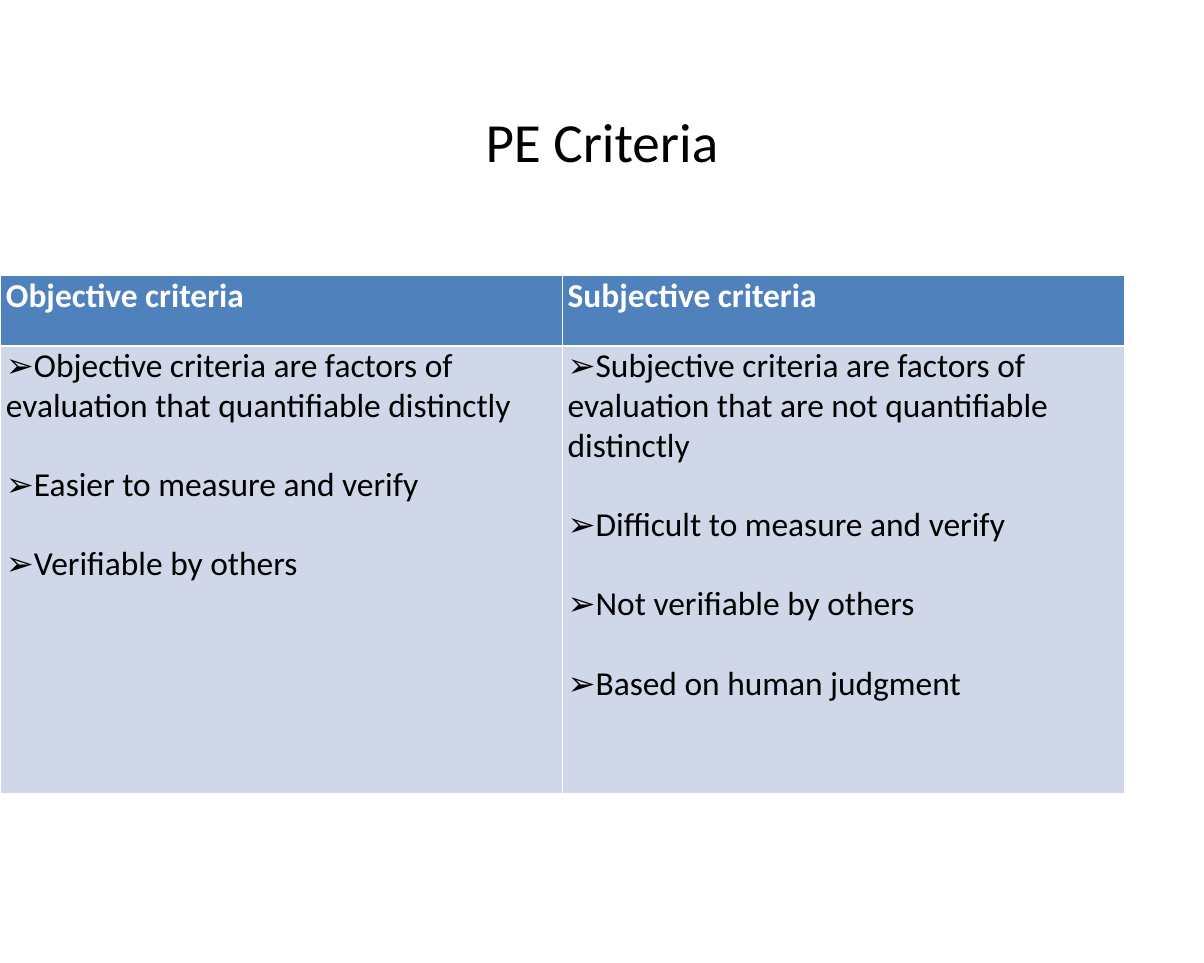
from dataclasses import dataclass

from lxml import etree
from pptx import Presentation
from pptx import util as u
from pptx.dml import color
from pptx.enum import text
from pptx.oxml import ns


@dataclass(frozen=True)
class Theme:
    font: str = "Calibri"
    bullet_font: str = "Arial"
    title_size: float = 66
    body_size: float = 40
    ink: str = "000000"
    white: str = "FFFFFF"
    header_fill: str = "4F81BC"
    body_fill: str = "D0D7E8"


THEME = Theme()
BULLET = "➢"
HEADINGS = ["Objective criteria", "Subjective criteria"]
POINTS = [
    [
        "Objective criteria are factors of evaluation that quantifiable distinctly",
        "Easier to measure and verify",
        "Verifiable by others",
    ],
    [
        "Subjective criteria are factors of evaluation that are not quantifiable distinctly",
        "Difficult to measure and verify",
        "Not verifiable by others",
        "Based on human judgment",
    ],
]
NO_MARGINS = {f"margin_{side}": 0 for side in ("left", "top", "right", "bottom")}


def apply(target, formats):
    for name, value in formats.items():
        setattr(target, name, value)


def add_span(para, words, tint, **formats):
    span = para.add_run()
    span.text = words
    base = {"name": THEME.font, "size": u.Pt(THEME.body_size), "bold": False}
    apply(span.font, base | formats)
    span.font.color.rgb = color.RGBColor.from_string(tint)


def add_border(cell, side, points):
    line = etree.SubElement(cell._tc.get_or_add_tcPr(), ns.qn(f"a:ln{side}"),
                            w=str(u.Pt(points)))
    fill = etree.SubElement(line, ns.qn("a:solidFill"))
    etree.SubElement(fill, ns.qn("a:srgbClr"), val=THEME.white)


def style_cell(cell, fill, top, bottom):
    apply(cell, NO_MARGINS | {"margin_left": u.Inches(0.09),
                              "vertical_anchor": text.MSO_ANCHOR.TOP})
    # Borders come before the fill in the cell properties
    for side, points in {"L": 1, "R": 1, "T": top, "B": bottom}.items():
        add_border(cell, side, points)
    cell.fill.solid()
    cell.fill.fore_color.rgb = color.RGBColor.from_string(fill)


def add_title(page, left, top, width, height):
    box = page.shapes.add_textbox(*map(u.Inches, (left, top, width, height)))
    apply(box.text_frame, NO_MARGINS | {"word_wrap": False})
    para = box.text_frame.paragraphs[0]
    para.alignment = text.PP_ALIGN.CENTER
    add_span(para, "PE Criteria", THEME.ink, size=u.Pt(THEME.title_size))


def fill_heading(cell, heading):
    style_cell(cell, THEME.header_fill, top=1, bottom=3)
    para = cell.text_frame.paragraphs[0]
    para.space_before = u.Pt(0.6)
    add_span(para, heading, THEME.white, bold=True)


def fill_points(cell, points):
    style_cell(cell, THEME.body_fill, top=3, bottom=1)
    frame = cell.text_frame
    for index, point in enumerate(points):
        para = frame.add_paragraph() if index else frame.paragraphs[0]
        if index:
            para.space_before = u.Pt(46)
        else:
            apply(para, {"space_before": u.Pt(1.1), "line_spacing": u.Pt(48)})
        add_span(para, BULLET, THEME.ink, name=THEME.bullet_font)
        add_span(para, point, THEME.ink)


def add_criteria_table(page, left, top, width, height):
    header_height = 1.17
    frame = page.shapes.add_table(2, len(HEADINGS),
                                  *map(u.Inches, (left, top, width, height)))
    table = frame.table
    table.horz_banding = False
    for column in table.columns:
        column.width = u.Inches(width / len(HEADINGS))
    for row, row_height in zip(table.rows, (header_height, height - header_height)):
        row.height = u.Inches(row_height)
    for index, (heading, points) in enumerate(zip(HEADINGS, POINTS)):
        fill_heading(table.cell(0, index), heading)
        fill_points(table.cell(1, index), points)


def main():
    deck = Presentation()
    apply(deck, {"slide_width": u.Inches(20), "slide_height": u.Inches(16)})
    page = deck.slides.add_slide(deck.slide_layouts[6])
    add_title(page, 8.05, 1.79, 3.9, 1.16)
    add_criteria_table(page, 0.01, 4.58, 18.66, 8.6)
    deck.save("out.pptx")


if __name__ == "__main__":
    main()
